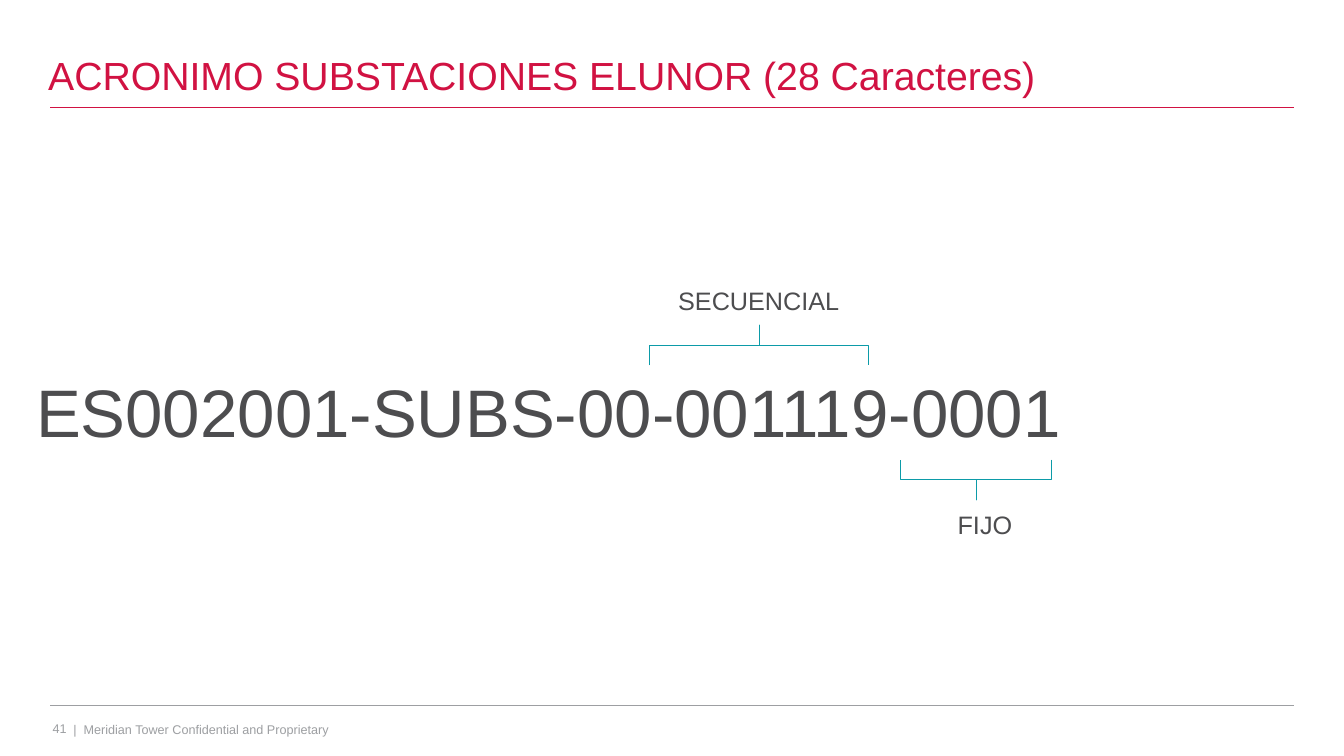
from lxml import etree
from pptx import Presentation
from pptx.dml.color import RGBColor
from pptx.enum.shapes import MSO_CONNECTOR, MSO_SHAPE
from pptx.enum.text import MSO_ANCHOR, PP_ALIGN
from pptx.oxml.ns import qn
from pptx.util import Inches, Pt

COLORS = {"red": "D11242", "gray": "9D9FA2", "text": "4D4D4F", "teal": "0C9BA8"}

# text, (left, top, width, height), size, color, alignment, anchor, wrap
LEFT, CENTER, RIGHT = PP_ALIGN.LEFT, PP_ALIGN.CENTER, PP_ALIGN.RIGHT
TOP, MIDDLE, BOTTOM = MSO_ANCHOR.TOP, MSO_ANCHOR.MIDDLE, MSO_ANCHOR.BOTTOM
TEXTS = [
    ("ACRONIMO SUBSTACIONES ELUNOR (28 Caracteres)", (0.38, 0.31, 12.43, 0.72),
     28, "red", LEFT, BOTTOM, True),
    ("ES002001-SUBS-00-001119-0001", (0.26, 3.62, 11.17, 0.91),
     48, "text", LEFT, TOP, True),
    ("SECUENCIAL", (6.62, 2.78, 1.81, 0.4), 18, "text", CENTER, TOP, False),
    ("FIJO", (9.4, 5, 1.03, 0.4), 18, "text", LEFT, TOP, True),
    ("41", (0.36, 7.13, 0.4, 0.2), 9, "gray", RIGHT, MIDDLE, True),
    ("|  Meridian Tower Confidential and Proprietary", (0.63, 7.11, 3.57, 0.25),
     9, "gray", LEFT, MIDDLE, True),
]
RULES = [(1.07, "red"), (7, "gray")]  # height on the slide, color
RULE_LEFT, RULE_RIGHT = 0.5, 12.83
# left, top, width, height before rotation, rotation
BRACES = [(7.33, 2.34, 0.4, 2.17, 270), (9.48, 4.01, 0.4, 1.5, 90)]


def rgb(name):
    return RGBColor.from_string(COLORS[name])


def add_text(slide, text, box, size, color, alignment, anchor, wrap):
    shape = slide.shapes.add_textbox(*map(Inches, box))
    frame = shape.text_frame
    frame.word_wrap = wrap
    frame.vertical_anchor = anchor
    paragraph = frame.paragraphs[0]
    paragraph.text = text
    paragraph.alignment = alignment
    paragraph.font.name = "Arial"
    paragraph.font.size = Pt(size)
    paragraph.font.color.rgb = rgb(color)
    return paragraph


def add_rule(slide, top, color):
    line = slide.shapes.add_connector(
        MSO_CONNECTOR.STRAIGHT, Inches(RULE_LEFT), Inches(top),
        Inches(RULE_RIGHT), Inches(top))
    line.line.color.rgb = rgb(color)
    line.line.width = Pt(0.5)
    etree.SubElement(line._element.spPr, qn("a:effectLst"))


def add_brace(slide, left, top, width, height, rotation):
    """Draw a square-cornered brace that opens toward the code."""
    brace = slide.shapes.add_shape(
        MSO_SHAPE.RIGHT_BRACE, *map(Inches, (left, top, width, height)))
    brace.rotation = rotation
    brace.adjustments[0] = 0
    brace.adjustments[1] = 0.5
    brace.shadow.inherit = False
    brace.fill.background()
    brace.line.color.rgb = rgb("teal")
    brace.line.width = Pt(0.5)


def main():
    presentation = Presentation()
    presentation.slide_width = Inches(13.33)
    presentation.slide_height = Inches(7.5)
    slide = presentation.slides.add_slide(presentation.slide_layouts[6])
    for rule in RULES:
        add_rule(slide, *rule)
    for brace in BRACES:
        add_brace(slide, *brace)
    title, *_ = [add_text(slide, *text) for text in TEXTS]
    title.line_spacing = 0.9
    presentation.save("out.pptx")


if __name__ == "__main__":
    main()
